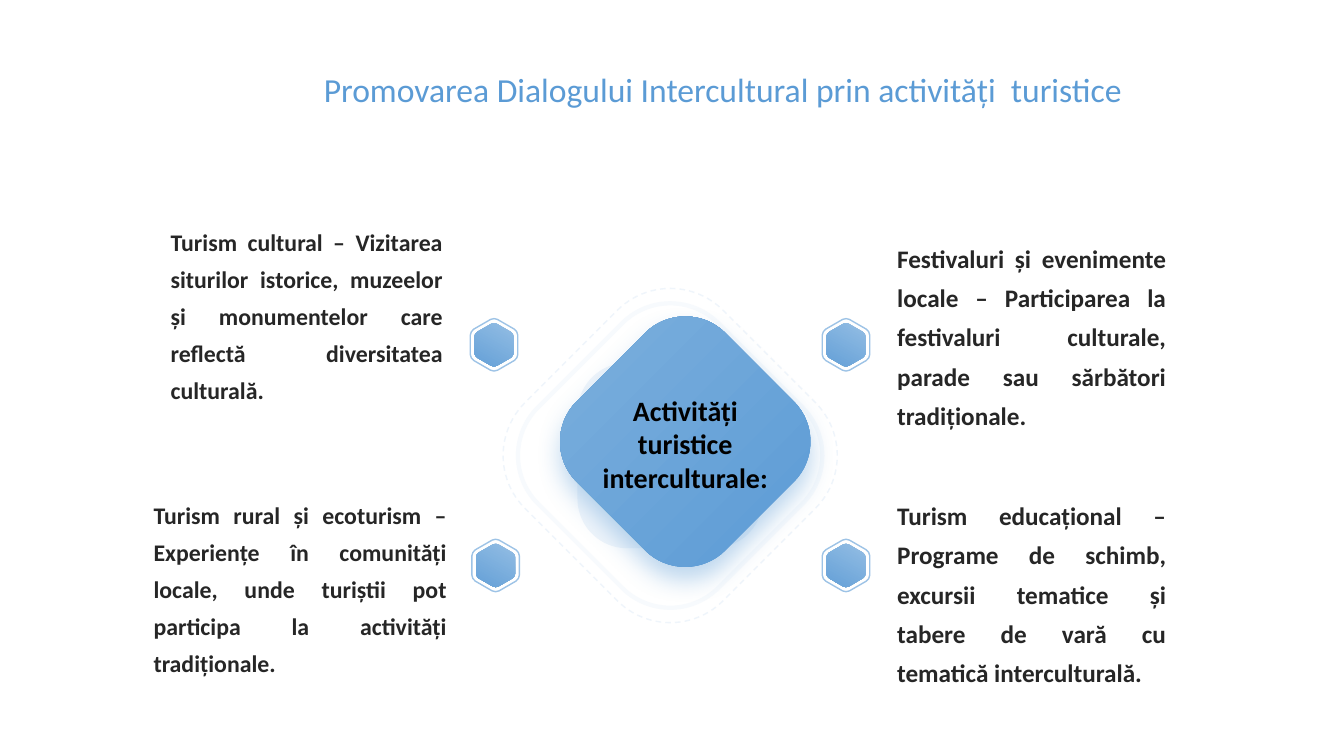
"""Build a slide on intercultural tourism activities around a central diamond."""
import math

from lxml import etree
from pptx import Presentation
from pptx.dml.color import RGBColor
from pptx.enum.dml import MSO_LINE
from pptx.enum.shapes import MSO_SHAPE
from pptx.enum.text import MSO_ANCHOR, MSO_AUTO_SIZE, PP_ALIGN
from pptx.oxml import parse_xml
from pptx.oxml.ns import nsdecls, qn
from pptx.util import Cm, Pt

ROUNDED = MSO_SHAPE.ROUNDED_RECTANGLE
DASH = MSO_LINE.DASH
TOP, MIDDLE = MSO_ANCHOR.TOP, MSO_ANCHOR.MIDDLE
CENTER, JUSTIFY = PP_ALIGN.CENTER, PP_ALIGN.JUSTIFY
NO_AUTOFIT = MSO_AUTO_SIZE.NONE

BLUE = RGBColor(0x5B, 0x9B, 0xD5)
MID_BLUE = RGBColor(0x7C, 0xAF, 0xDD)
LIGHT_BLUE = RGBColor(0x9D, 0xC3, 0xE6)
PALE_BLUE = RGBColor(0xEF, 0xF5, 0xFB)
FAINT_BLUE = RGBColor(0xF7, 0xFA, 0xFD)
DARK_GRAY = RGBColor(0x26, 0x26, 0x26)
BLACK = RGBColor(0, 0, 0)

FONT = "Calibri"
NO_INSETS = (0, 0, 0, 0)
FRAME_CENTER = (16.89, 11.48)
DIAMOND_CENTER = (17.27, 11.13)
HEXAGON_CENTERS = [(12.45, 8.69), (12.49, 14.25), (21.32, 8.69), (21.32, 14.25)]

ACTIVITIES = [
    (22.61, 5.9, 6.78, 4.9, 18,
     "Festivaluri și evenimente locale – Participarea la festivaluri culturale, "
     "parade sau sărbători tradiționale."),
    (22.61, 12.38, 6.78, 4.06, 18,
     "Turism educațional – Programe de schimb, excursii tematice și tabere de vară "
     "cu tematică interculturală."),
    (3.87, 12.39, 7.39, 4.06, 17,
     "Turism rural și ecoturism – Experiențe în comunități locale, unde turiștii pot "
     "participa la activități tradiționale."),
    (4.3, 5.51, 6.86, 5.28, 17,
     "Turism cultural – Vizitarea siturilor istorice, muzeelor și monumentelor care "
     "reflectă diversitatea culturală."),
]


def write_text(box, text, size, color, bold, align, anchor, insets, spacing=None):
    """Fill a box with one formatted paragraph."""
    frame = box.text_frame
    frame.word_wrap = True
    frame.auto_size = NO_AUTOFIT
    frame.vertical_anchor = anchor
    frame.margin_left, frame.margin_top, frame.margin_right, frame.margin_bottom = (
        Cm(inset) for inset in insets)
    para = frame.paragraphs[0]
    para.text = text
    para.alignment = align
    para.line_spacing = spacing
    para.font.name = FONT
    para.font.size = Pt(size)
    para.font.bold = bold
    para.font.color.rgb = color


def set_outline(shape, color, width, dash=None):
    """Give a shape an outline and no fill."""
    shape.fill.background()
    shape.line.color.rgb = color
    shape.line.width = Pt(width)
    if dash:
        shape.line.dash_style = dash


def set_gradient(shape, first, last, angle):
    """Give a shape a two-colour gradient and no outline."""
    shape.fill.gradient()
    shape.fill.gradient_angle = angle
    for stop, color in zip(shape.fill.gradient_stops, (first, last)):
        stop.color.rgb = color
    shape.line.fill.background()


def add_frame(page, side, rotation):
    """Add a rounded square behind the diamond."""
    left, top = (middle - side / 2 for middle in FRAME_CENTER)
    frame = page.shapes.add_shape(ROUNDED, Cm(left), Cm(top), Cm(side), Cm(side))
    frame.adjustments[0] = 0.267
    frame.rotation = rotation
    frame.shadow.inherit = False
    return frame


def corner_controls(before, corner, after, cut):
    """Return the four control points of the curve that rounds a corner."""
    pulls = ((before, cut), (before, cut * 0.45), (after, cut * 0.45), (after, cut))
    return [tuple(Cm(c + (n - c) * pull / math.dist(corner, near))
                  for c, n in zip(corner, near)) for near, pull in pulls]


def curve_corners(polygon):
    """Turn the three segments at each corner into one Bézier curve."""
    segments = list(polygon._element.spPr.iter(qn("a:lnTo")))
    for first in range(0, len(segments), 4):
        curve = etree.Element(qn("a:cubicBezTo"))
        segments[first].addprevious(curve)
        for segment in segments[first:first + 3]:
            curve.append(segment[0])
            segment.getparent().remove(segment)


def add_rounded_polygon(page, center, radius, sides, cut):
    """Add a regular polygon with a corner at the right and rounded corners."""
    angles = [2 * math.pi * index / sides for index in range(sides)]
    corners = [(center[0] + radius * math.cos(angle),
                center[1] + radius * math.sin(angle)) for angle in angles]
    points = []
    for index, corner in enumerate(corners):
        points += corner_controls(
            corners[index - 1], corner, corners[(index + 1) % sides], cut)
    builder = page.shapes.build_freeform(*points[0])
    builder.add_line_segments(points[1:], close=True)
    polygon = builder.convert_to_shape()
    curve_corners(polygon)
    polygon.shadow.inherit = False
    return polygon


def add_glow_shadow(shape):
    """Cast a soft blue shadow below a shape."""
    effects = shape._element.spPr.find(qn("a:effectLst"))
    shadow = parse_xml(
        f'<a:outerShdw {nsdecls("a")} blurRad="{Pt(17)}" dist="{Pt(9)}" '
        f'dir="5400000" algn="t" rotWithShape="0"><a:srgbClr val="{BLUE}"/>'
        '</a:outerShdw>')
    etree.SubElement(shadow[0], qn("a:alpha"), val="40000")
    effects.append(shadow)


def add_diamond(page):
    """Add the central diamond with its frames and label."""
    backdrop = add_frame(page, 4.67, 0)
    backdrop.fill.solid()
    backdrop.fill.fore_color.rgb = PALE_BLUE
    backdrop.line.fill.background()
    set_outline(add_frame(page, 6.43, 45), FAINT_BLUE, 3)
    set_outline(add_frame(page, 7.06, 45), PALE_BLUE, 1, DASH)
    diamond = add_rounded_polygon(page, DIAMOND_CENTER, 3.75, 4, 1.43)
    set_gradient(diamond, BLUE, MID_BLUE, 135)
    add_glow_shadow(diamond)
    write_text(diamond, "Activități turistice interculturale:", 20, BLACK, True,
               CENTER, MIDDLE, (1.11, 1.06, 1.11, 0.96))


def add_hexagon(page, center):
    """Add a hexagon marker inside a thin outline."""
    outline = add_rounded_polygon(page, center, 0.69, 6, 0.1)
    set_outline(outline, LIGHT_BLUE, 1)
    core = add_rounded_polygon(page, center, 0.57, 6, 0.08)
    set_gradient(core, LIGHT_BLUE, BLUE, 270)
    for shape in (outline, core):
        shape.rotation = 30


def add_activity(page, left, top, width, height, size, text):
    """Add the description of one activity."""
    box = page.shapes.add_textbox(Cm(left), Cm(top), Cm(width), Cm(height))
    write_text(box, text, size, DARK_GRAY, True, JUSTIFY, TOP, NO_INSETS, 1.3)


def add_title(page):
    """Place and format the title."""
    title = page.shapes.title
    title.left, title.top, title.width, title.height = (
        Cm(7.23), Cm(1.61), Cm(22.17), Cm(2.11))
    write_text(title, "Promovarea Dialogului Intercultural prin activități  turistice ",
               24, BLUE, False, CENTER, TOP, (0.25, 0.13, 0.25, 0.13))


def main():
    """Build and save the deck."""
    deck = Presentation()
    deck.slide_width, deck.slide_height = Cm(33.87), Cm(19.05)
    page = deck.slides.add_slide(deck.slide_layouts.get_by_name("Title Only"))
    add_title(page)
    add_diamond(page)
    for center in HEXAGON_CENTERS:
        add_hexagon(page, center)
    for activity in ACTIVITIES:
        add_activity(page, *activity)
    deck.save("out.pptx")


if __name__ == "__main__":
    main()
